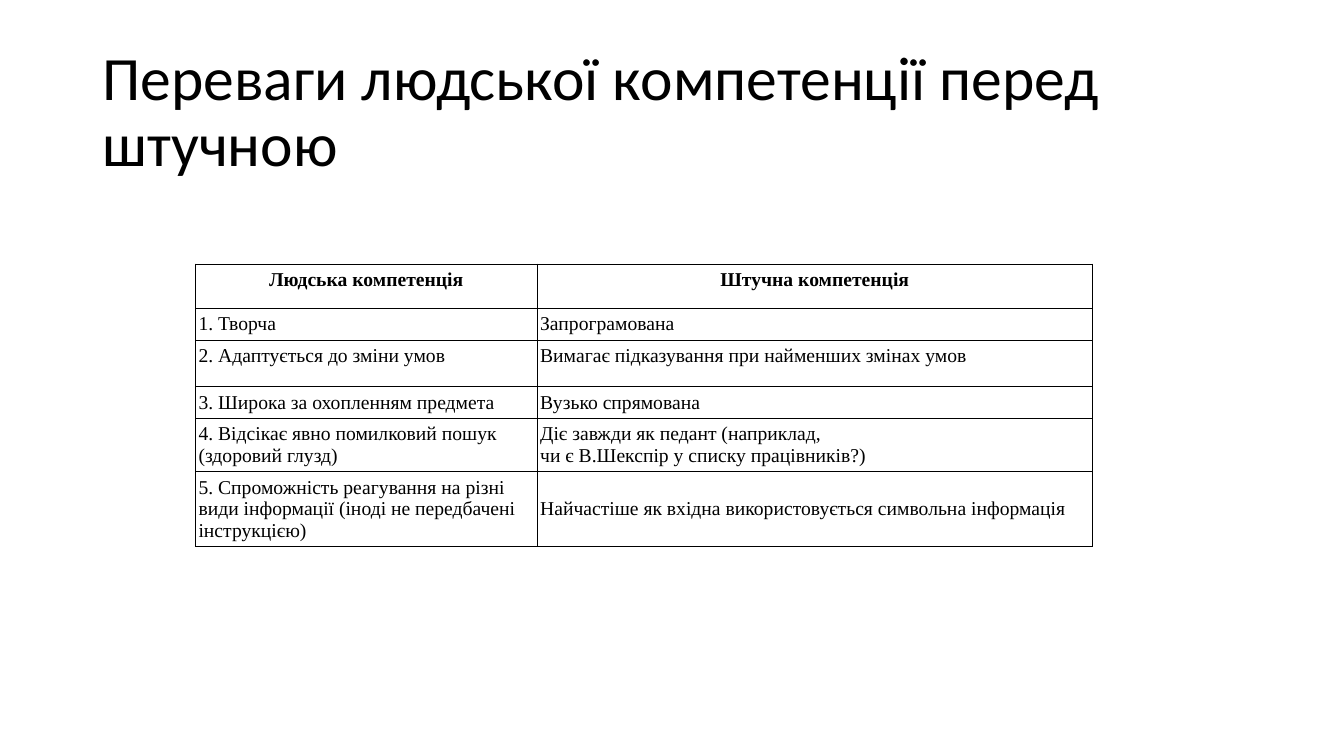
from typing import NamedTuple

from lxml.etree import SubElement
from pptx import Presentation
from pptx.dml.color import RGBColor
from pptx.enum.text import MSO_ANCHOR, PP_ALIGN
from pptx.oxml.ns import qn
from pptx.util import Inches, Pt

SLIDE_WIDTH, SLIDE_HEIGHT = Inches(13.333), Inches(7.5)
COLORS = {"text": "000000", "border": "000000", "cell": "FFFFFF"}
TITLE = "Переваги людської компетенції перед штучною"


class Comparison(NamedTuple):
    human: str
    artificial: str
    height: float  # percent of the slide height
    anchor: MSO_ANCHOR = MSO_ANCHOR.TOP


class Box(NamedTuple):
    """Place and size in percent of the slide."""
    left: float
    top: float
    width: float
    height: float


COMPARISONS = [
    Comparison("Людська компетенція", "Штучна компетенція", 5.87),
    Comparison("1. Творча", "Запрограмована", 3.47),
    Comparison("2. Адаптується до зміни умов",
               "Вимагає підказування при найменших змінах умов", 6.13),
    Comparison("3. Широка за охопленням предмета", "Вузько спрямована", 3.6),
    Comparison("4. Відсікає явно помилковий пошук (здоровий глузд)",
               "Діє завжди як педант (наприклад,\vчи є В.Шекспір у списку працівників?)", 6.27),
    Comparison("5. Спроможність реагування на різні види інформації "
               "(іноді не передбачені інструкцією)",
               "Найчастіше як вхідна використовується символьна інформація",
               8.93, MSO_ANCHOR.MIDDLE),
]
COLUMN_WIDTHS = (25.42, 41.33)
TITLE_BOX = Box(6.88, 5.33, 86.25, 19.33)
TABLE_BOX = Box(14.55, 34.93, sum(COLUMN_WIDTHS), sum(row.height for row in COMPARISONS))


def across(percent: float) -> int:
    return round(SLIDE_WIDTH * percent / 100)


def down(percent: float) -> int:
    return round(SLIDE_HEIGHT * percent / 100)


def place(box: Box) -> tuple[int, int, int, int]:
    return across(box.left), down(box.top), across(box.width), down(box.height)


def format_runs(paragraph, font_name: str, size: float, bold: bool = False) -> None:
    for run in paragraph.runs:
        run.font.name = font_name
        run.font.size = Pt(size)
        run.font.bold = bold
        run.font.color.rgb = RGBColor.from_string(COLORS["text"])


def add_borders(cell) -> None:
    properties = cell._tc.get_or_add_tcPr()
    for side in ("a:lnL", "a:lnR", "a:lnT", "a:lnB"):
        line = SubElement(properties, qn(side), w=str(Pt(0.75)))
        fill = SubElement(line, qn("a:solidFill"))
        SubElement(fill, qn("a:srgbClr"), val=COLORS["border"])


def fill_cell(cell, words: str, anchor: MSO_ANCHOR, header: bool) -> None:
    add_borders(cell)
    cell.fill.solid()
    cell.fill.fore_color.rgb = RGBColor.from_string(COLORS["cell"])
    cell.margin_left = cell.margin_right = Inches(0.03)
    cell.margin_top = cell.margin_bottom = Inches(0.05)
    cell.vertical_anchor = anchor
    paragraph = cell.text_frame.paragraphs[0]
    paragraph.text = words
    paragraph.alignment = PP_ALIGN.CENTER if header else PP_ALIGN.LEFT
    format_runs(paragraph, "Times New Roman", 14, bold=header)


def add_title(slide) -> None:
    title = slide.shapes.title
    title.left, title.top, title.width, title.height = place(TITLE_BOX)
    frame = title.text_frame
    frame.text = TITLE
    frame.word_wrap = True
    frame.vertical_anchor = MSO_ANCHOR.MIDDLE
    heading = frame.paragraphs[0]
    heading.alignment = PP_ALIGN.LEFT
    heading.line_spacing = 0.9
    format_runs(heading, "Calibri", 44)


def add_comparison_table(slide) -> None:
    table = slide.shapes.add_table(
        len(COMPARISONS), len(COLUMN_WIDTHS), *place(TABLE_BOX)).table
    table.horz_banding = False
    for column, width in zip(table.columns, COLUMN_WIDTHS):
        column.width = across(width)
    for index, (row, comparison) in enumerate(zip(table.rows, COMPARISONS)):
        row.height = down(comparison.height)
        for cell, words in zip(row.cells, (comparison.human, comparison.artificial)):
            fill_cell(cell, words, comparison.anchor, header=index == 0)


def main() -> None:
    presentation = Presentation()
    presentation.slide_width, presentation.slide_height = SLIDE_WIDTH, SLIDE_HEIGHT
    slide = presentation.slides.add_slide(presentation.slide_layouts.get_by_name("Title Only"))
    add_title(slide)
    add_comparison_table(slide)
    presentation.save("out.pptx")


if __name__ == "__main__":
    main()
